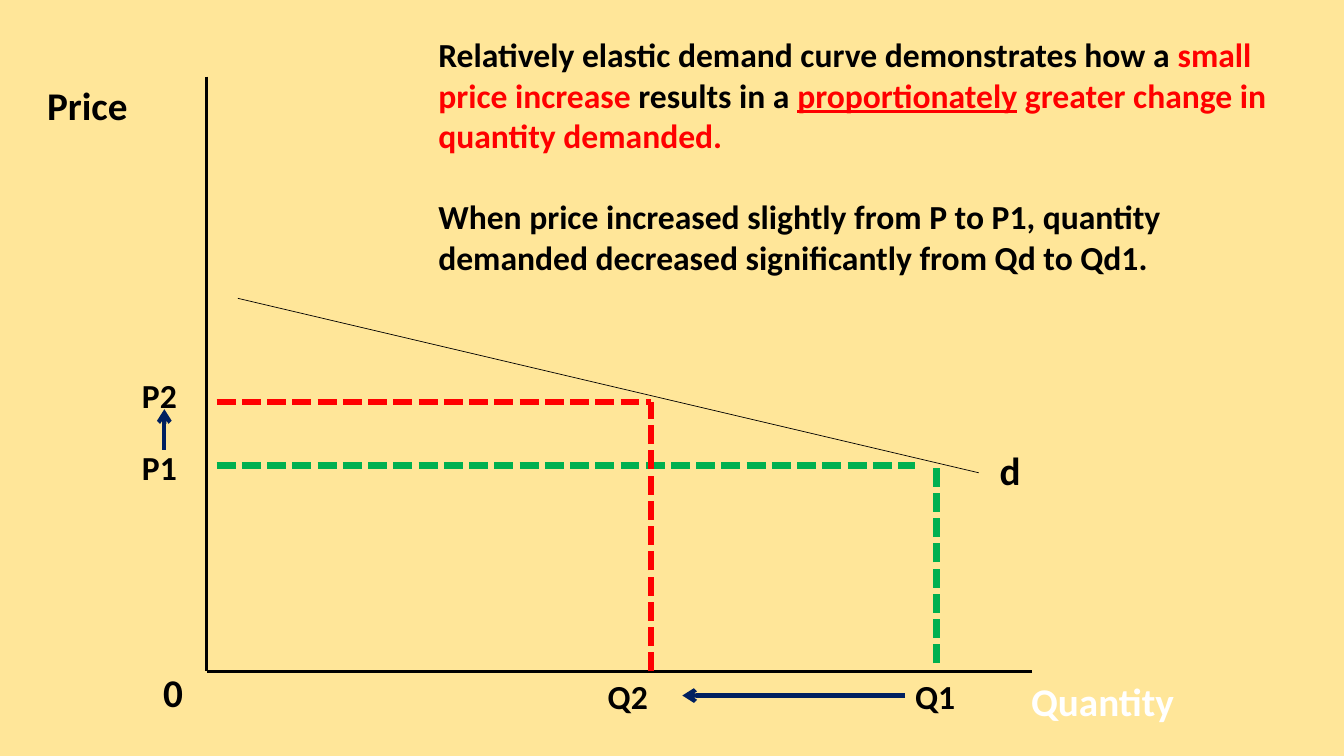
"""Build a slide explaining a relatively elastic demand curve."""
from lxml import etree
from pptx import Presentation
from pptx.dml.color import RGBColor
from pptx.enum.dml import MSO_LINE
from pptx.enum.shapes import MSO_CONNECTOR
from pptx.enum.text import MSO_AUTO_SIZE
from pptx.oxml.ns import qn
from pptx.util import Pt

STRAIGHT = MSO_CONNECTOR.STRAIGHT
DASHED = MSO_LINE.SQUARE_DOT
SYSTEM_DASH = "sysDash"
GROW = MSO_AUTO_SIZE.SHAPE_TO_FIT_TEXT

THEME = {
    "font": "Calibri",
    "background": RGBColor(0xFF, 0xE6, 0x99),
    "black": RGBColor(0, 0, 0),
    "white": RGBColor(0xFF, 0xFF, 0xFF),
    "red": RGBColor(0xFF, 0, 0),
    "green": RGBColor(0, 0xB0, 0x50),
    "navy": RGBColor(0, 0x20, 0x60),
    "large": 28,
    "medium": 24,
}
LINE_STYLES = {
    "axis": {"color": "black", "width": 2.5},
    "demand": {"color": "black", "width": 0.5},
    "before": {"color": "green", "width": 4.5, "dashed": True},
    "after": {"color": "red", "width": 4.5, "dashed": True},
    "change": {"color": "navy", "width": 3, "arrow": True},
}
SLIDE_SIZE = (960, 540)
ORIGIN_X, ORIGIN_Y = 147.6, 479.5
GUIDE_LEFT = 154.8
P1_Y, P2_Y = 332.6, 287.3
Q1_X, Q2_X = 668.9, 465.1
PRICE_ARROW_X, QUANTITY_ARROW_Y = 117.4, 496.8

LINES = [
    ("axis", (ORIGIN_X, 54.7), (ORIGIN_X, ORIGIN_Y)),
    ("axis", (737.3, ORIGIN_Y), (ORIGIN_X, ORIGIN_Y)),
    ("demand", (169.9, 213.1), (699.1, 337.7)),
    ("before", (GUIDE_LEFT, P1_Y), (653.8, P1_Y)),
    ("after", (GUIDE_LEFT, P2_Y), (Q2_X, P2_Y)),
    ("after", (Q2_X, ORIGIN_Y), (Q2_X, P2_Y)),
    ("before", (Q1_X, 473.8), (Q1_X, P1_Y)),
    ("change", (PRICE_ARROW_X, 321.1), (PRICE_ARROW_X, 292.3)),
    ("change", (646.6, QUANTITY_ARROW_Y), (487.4, QUANTITY_ARROW_Y)),
]
LABELS = [
    ("Price", "large", "black", (26.6, 54.7, 113, 41)),
    ("0", "large", "black", (109.4, 473.8, 30.2, 41)),
    ("d", "large", "black", (707, 315.4, 37.4, 41)),
    ("Quantity", "large", "white", (729.4, 480, 140, 41)),
    ("P2", "medium", "black", (94.3, 264.2, 52.6, 36)),
    ("P1", "medium", "black", (94.3, 315.4, 45.4, 36)),
    ("Q1", "medium", "black", (646.6, ORIGIN_Y, 60.5, 36)),
    ("Q2", "medium", "black", (427, ORIGIN_Y, 75.6, 36)),
]
EXPLANATION_BOX = (306, 20.9, 635, 181.4)
EXPLANATION_GAP = 29.3
EXPLANATION = [
    [
        ("Relatively elastic demand curve demonstrates how a ", "black", False),
        ("small price increase", "red", False),
        (" results in a ", "black", False),
        ("proportionately", "red", True),
        (" greater change in quantity demanded.", "red", False),
    ],
    [
        ("When price increased slightly from P to P1, quantity demanded "
         "decreased significantly from Qd to Qd1.", "black", False),
    ],
]


def add_line(slide, style, start, end):
    connector = slide.shapes.add_connector(
        STRAIGHT, *(Pt(value) for value in start + end))
    connector.line.color.rgb = THEME[style["color"]]
    connector.line.width = Pt(style["width"])
    properties = connector.line._get_or_add_ln()
    if style.get("dashed"):
        connector.line.dash_style = DASHED
        properties.find(qn("a:prstDash")).set("val", SYSTEM_DASH)
    if style.get("arrow"):
        etree.SubElement(properties, qn("a:tailEnd")).set("type", "arrow")
    etree.SubElement(connector._element.spPr, qn("a:effectLst"))


def add_text(slide, paragraphs, size, box, gap=0):
    shape = slide.shapes.add_textbox(*(Pt(value) for value in box))
    frame = shape.text_frame
    frame.word_wrap = True
    frame.auto_size = GROW
    for index, runs in enumerate(paragraphs):
        paragraph = frame.add_paragraph() if index else frame.paragraphs[0]
        paragraph.space_before = Pt(gap if index else 0)
        for text, color, underline in runs:
            run = paragraph.add_run()
            run.text = text
            run.font.color.rgb = THEME[color]
            formats = {"name": THEME["font"], "size": Pt(THEME[size]),
                       "bold": True, "underline": underline}
            for attribute, value in formats.items():
                setattr(run.font, attribute, value)


def main():
    presentation = Presentation()
    presentation.slide_width, presentation.slide_height = map(Pt, SLIDE_SIZE)
    slide = presentation.slides.add_slide(presentation.slide_layouts[6])
    slide.background.fill.solid()
    slide.background.fill.fore_color.rgb = THEME["background"]
    for style, start, end in LINES:
        add_line(slide, LINE_STYLES[style], start, end)
    for text, size, color, box in LABELS:
        add_text(slide, [[(text, color, False)]], size, box)
    add_text(slide, EXPLANATION, "medium", EXPLANATION_BOX, EXPLANATION_GAP)
    presentation.save("out.pptx")


if __name__ == "__main__":
    main()
